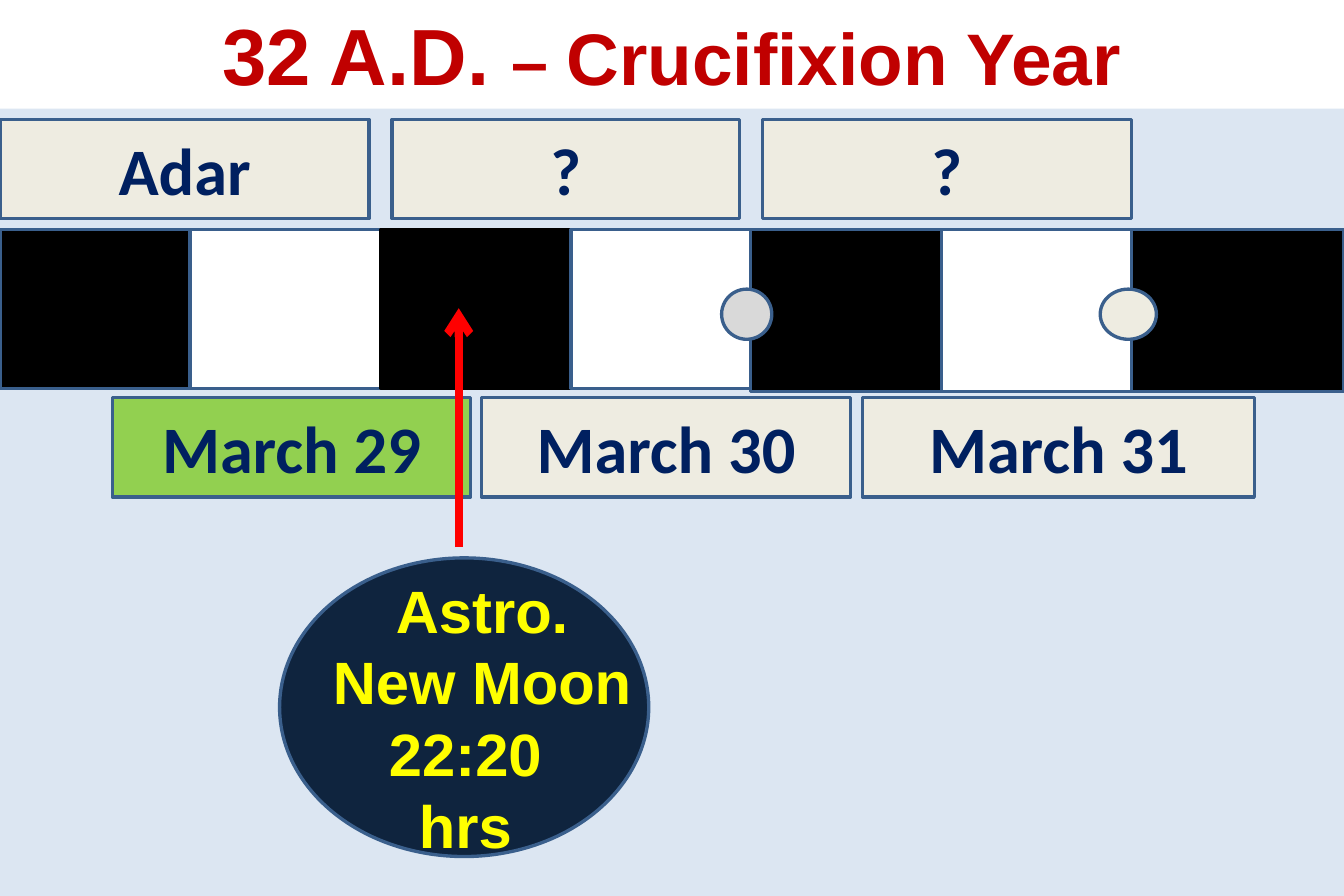
from lxml import etree
from pptx import Presentation
from pptx.dml.color import RGBColor
from pptx.enum.shapes import MSO_CONNECTOR, MSO_SHAPE
from pptx.enum.text import MSO_ANCHOR, PP_ALIGN
from pptx.oxml.ns import qn
from pptx.util import Inches, Pt

RECTANGLE, OVAL = MSO_SHAPE.RECTANGLE, MSO_SHAPE.OVAL
STRAIGHT = MSO_CONNECTOR.STRAIGHT
TOP, MIDDLE = MSO_ANCHOR.TOP, MSO_ANCHOR.MIDDLE
CENTER = PP_ALIGN.CENTER

BACKGROUND, OUTLINE, NAVY = "DCE6F2", "3A5F8C", "002060"
BLACK, WHITE, CREAM, GREEN = "000000", "FFFFFF", "EEECE1", "92D050"
GRAY, MIDNIGHT, YELLOW = "D9D9D9", "0F243E", "FFFF00"
RED, DARK_RED = "FF0000", "C00000"


def color(value):
    return RGBColor.from_string(value)


class SlideBuilder:
    def __init__(self, slide):
        self.slide = slide
        fill = slide.background.fill
        fill.solid()
        fill.fore_color.rgb = color(BACKGROUND)

    def shape(self, kind, left, top, width, height, fill, line=OUTLINE):
        shape = self.slide.shapes.add_shape(
            kind, Inches(left), Inches(top), Inches(width), Inches(height))
        shape.shadow.inherit = False
        shape.fill.solid()
        shape.fill.fore_color.rgb = color(fill)
        if line:
            shape.line.color.rgb = color(line)
            shape.line.width = Pt(2)
        else:
            shape.line.fill.background()
        return shape

    def set_text(self, shape, lines, size, font, text_color, anchor):
        """Fill the shape with centred bold lines and return its paragraphs."""
        frame = shape.text_frame
        frame.word_wrap = True
        frame.vertical_anchor = anchor
        frame.text = "\n".join(lines)
        for paragraph in frame.paragraphs:
            paragraph.alignment = CENTER
            paragraph.font.name = font
            paragraph.font.size = Pt(size)
            paragraph.font.bold = True
            paragraph.font.color.rgb = color(text_color)
        return frame.paragraphs

    def label(self, left, top, width, text, fill=CREAM):
        box = self.shape(RECTANGLE, left, top, width, 0.83, fill)
        self.set_text(box, [text], 40, "Calibri", NAVY, MIDDLE)

    def text_box(self, left, top, width, height, lines, size, text_color):
        box = self.slide.shapes.add_textbox(
            Inches(left), Inches(top), Inches(width), Inches(height))
        return self.set_text(box, lines, size, "Arial", text_color, TOP)

    def title(self, runs):
        band = self.shape(RECTANGLE, 0, 0, 11.25, 0.91, WHITE, None)
        paragraph = self.set_text(band, [""], 48, "Arial", DARK_RED, TOP)[0]
        for text, size in runs:
            run = paragraph.add_run()
            run.text = text
            run.font.size = Pt(size)

    def arrow(self, x, start, end):
        arrow = self.slide.shapes.add_connector(
            STRAIGHT, Inches(x), Inches(start), Inches(x), Inches(end))
        arrow.line.color.rgb = color(RED)
        arrow.line.width = Pt(5)
        properties = arrow._element.spPr
        etree.SubElement(properties.find(qn("a:ln")), qn("a:tailEnd"), type="arrow")
        etree.SubElement(properties, qn("a:effectLst"))


def main():
    presentation = Presentation()
    presentation.slide_width = Inches(11.25)
    presentation.slide_height = Inches(7.5)
    builder = SlideBuilder(presentation.slides.add_slide(presentation.slide_layouts[6]))

    builder.title([("32 A.D. ", 48), ("– ", 40), ("Crucifixion Year", 44)])

    nights_and_days = [
        (0, 1.59, 1.33, BLACK, OUTLINE),
        (1.59, 1.69, 1.33, WHITE, OUTLINE),
        (3.19, 1.69, 1.33, BLACK, BLACK),
        (4.78, 1.59, 1.33, WHITE, OUTLINE),
        (6.28, 1.69, 1.36, BLACK, OUTLINE),
        (7.88, 1.78, 1.36, WHITE, OUTLINE),
        (9.47, 1.78, 1.36, BLACK, OUTLINE),
    ]
    for left, width, height, fill, line in nights_and_days:
        builder.shape(RECTANGLE, left, 1.92, width, height, fill, line)

    for left, width, month in [(0, 3.09, "Adar"), (3.28, 2.91, "?"), (6.38, 3.09, "?")]:
        builder.label(left, 1, width, month)
    for left, width, date, fill in [(0.94, 3, "March 29", GREEN),
                                    (4.03, 3.09, "March 30", CREAM),
                                    (7.22, 3.28, "March 31", CREAM)]:
        builder.label(left, 3.33, width, date, fill)

    for left, width, fill in [(6.04, 0.42, GRAY), (9.21, 0.47, CREAM)]:
        builder.shape(OVAL, left, 2.42, width, 0.42, fill)

    builder.arrow(3.84, 4.58, 2.58)
    builder.shape(OVAL, 2.34, 4.67, 3.09, 2.5, MIDNIGHT)
    new_moon = builder.text_box(2.44, 4.75, 3.19, 2.52,
                                ["Astro.", "New Moon", "22:20", "hrs"], 36, YELLOW)
    # A right margin sets the time slightly left of the other lines.
    new_moon[2]._p.get_or_add_pPr().set("marR", str(Inches(0.28)))

    presentation.save("out.pptx")


if __name__ == "__main__":
    main()
